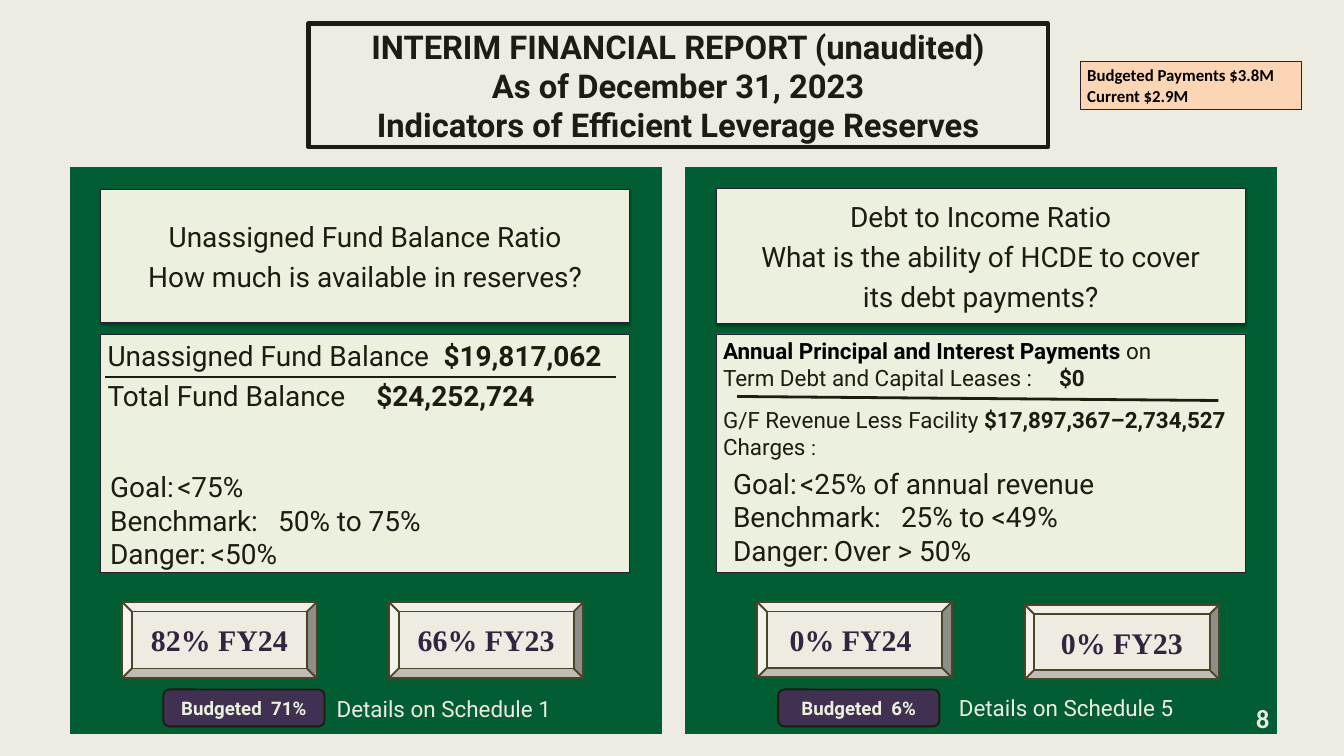
from lxml.etree import SubElement
from pptx import Presentation
from pptx.dml.color import RGBColor
from pptx.enum.shapes import MSO_CONNECTOR, MSO_SHAPE
from pptx.enum.text import MSO_ANCHOR, MSO_AUTO_SIZE, PP_ALIGN
from pptx.oxml.ns import qn
from pptx.util import Inches, Pt

CREAM, GREEN, PALE, INK = "EEECE1", "025E32", "EBF1DE", "1E1C11"
EDGE, BRONZE, PLUM, BLACK = "291F35", "4A452A", "403152", "000000"
BOLD = {"bold": True}


def rgb(color):
    """Turn a hex string into a colour."""
    return RGBColor.from_string(color)


def place(sp, x, y, w, h):
    """Set the position and size of a shape in inches."""
    sp.left, sp.top, sp.width, sp.height = (Inches(v) for v in (x, y, w, h))


def style(sp, fill=None, line=None, width=0.75):
    """Set the fill and outline of a shape."""
    if fill:
        sp.fill.solid()
        sp.fill.fore_color.rgb = rgb(fill)
    else:
        sp.fill.background()
    if line:
        sp.line.color.rgb = rgb(line)
        sp.line.width = Pt(width)
    else:
        sp.line.fill.background()


def add_run(p, text, size, font, color, bold=False):
    """Add one formatted run to a paragraph."""
    r = p.add_run()
    r.text = text
    r.font.size = Pt(size)
    r.font.name = font
    r.font.bold = bold
    r.font.color.rgb = rgb(color)


def set_tab(p, pos, align):
    """Give a paragraph one tab stop."""
    tabs = SubElement(p._p.get_or_add_pPr(), qn("a:tabLst"))
    SubElement(tabs, qn("a:tab"), pos=str(Inches(pos)), algn=align)


def write(sp, paras, size=30, font="Roboto", color=INK, bold=False,
          align=PP_ALIGN.LEFT, anchor=MSO_ANCHOR.TOP, before=0, tab=None,
          tab_align="l", inset=None, grow=False):
    """Fill a shape with paragraphs, each a string or a list of (text, format) runs."""
    tf = sp.text_frame
    tf.word_wrap = True
    tf.auto_size = MSO_AUTO_SIZE.SHAPE_TO_FIT_TEXT if grow else MSO_AUTO_SIZE.NONE
    tf.vertical_anchor = anchor
    if inset is not None:
        tf.margin_left = tf.margin_right = tf.margin_top = tf.margin_bottom = Inches(inset)
    befores = before if isinstance(before, list) else [before] * len(paras)
    stops = tab if isinstance(tab, list) else [tab] * len(paras)
    for i, (runs, gap, stop) in enumerate(zip(paras, befores, stops)):
        p = tf.add_paragraph() if i else tf.paragraphs[0]
        p.alignment = align
        p.space_before = Pt(gap)
        pPr = p._p.get_or_add_pPr()
        pPr.set("marL", "0")
        pPr.set("indent", "0")
        SubElement(pPr, qn("a:buNone"))
        if stop:
            set_tab(p, stop, tab_align)
        for text, fmt in [(runs, {})] if isinstance(runs, str) else runs:
            base = {"size": size, "font": font, "color": color, "bold": bold}
            for j, part in enumerate(text.split("\n")):
                if j:
                    p.add_line_break()
                add_run(p, part, **{**base, **fmt})


def add_panel(s, x):
    """Add a green panel behind the placeholders."""
    fb = s.shapes.build_freeform(Inches(x), Inches(2.48))
    fb.add_line_segments([(Inches(a), Inches(b)) for a, b in
                          ((x + 8.81, 2.48), (x + 8.81, 10.93), (x, 10.93))])
    sp = fb.convert_to_shape()
    sp.shadow.inherit = False
    style(sp, GREEN)
    sp.element.getparent().insert(2, sp.element)


def add_shadow(sp):
    """Add a soft shadow below a shape."""
    effects = SubElement(sp.element.spPr, qn("a:effectLst"))
    shadow = SubElement(effects, qn("a:outerShdw"), blurRad=str(Pt(3.1)),
                        dist=str(Pt(1.8)), dir="5400000", rotWithShape="0")
    color = SubElement(shadow, qn("a:srgbClr"), val=BLACK)
    SubElement(color, qn("a:alpha"), val="35000")


def add_header(s, idx, box, paras):
    """Fill a heading placeholder with the name and question of a ratio."""
    sp = s.placeholders[idx]
    place(sp, *box)
    style(sp, PALE, EDGE)
    add_shadow(sp)
    write(sp, paras, align=PP_ALIGN.CENTER, anchor=MSO_ANCHOR.MIDDLE, before=7)


def add_body(s, idx, box, paras, **fmt):
    """Fill a content placeholder with the terms of a ratio."""
    sp = s.placeholders[idx]
    place(sp, *box)
    style(sp, PALE, EDGE)
    write(sp, paras, **fmt)


def add_box(s, kind, box, paras, fill, line, width, **fmt):
    """Add a preset shape with text."""
    sp = s.shapes.add_shape(kind, *(Inches(v) for v in box))
    sp.shadow.inherit = False
    style(sp, fill, line, width)
    write(sp, paras, **fmt)


def add_label(s, box, paras, **fmt):
    """Add a text box."""
    sp = s.shapes.add_textbox(*(Inches(v) for v in box))
    write(sp, paras, grow=True, **fmt)


def add_rule(s, x1, y1, x2, y2):
    """Add a fraction line."""
    cn = s.shapes.add_connector(MSO_CONNECTOR.STRAIGHT, *(Inches(v) for v in (x1, y1, x2, y2)))
    cn.line.color.rgb = rgb(INK)
    cn.line.width = Pt(3)
    SubElement(cn.element.spPr, qn("a:effectLst"))


def main():
    """Build the slide."""
    prs = Presentation()
    prs.slide_width, prs.slide_height = Inches(20), Inches(11.25)
    s = prs.slides.add_slide(prs.slide_layouts[4])
    s.background.fill.solid()
    s.background.fill.fore_color.rgb = rgb(CREAM)
    centred = {"align": PP_ALIGN.CENTER, "anchor": MSO_ANCHOR.MIDDLE, "bold": True}

    for x in (1.04, 10.19):
        add_panel(s, x)

    title = s.shapes.title
    place(title, 4.59, 0.35, 11, 1.84)
    style(title, line=INK, width=4.5)
    write(title, ["INTERIM FINANCIAL REPORT (unaudited)\nAs of December 31, 2023\n"
                  "Indicators of Efficient Leverage Reserves"], size=35.1, inset=0, **centred)

    add_header(s, 1, (1.5, 2.82, 7.87, 1.98),
               ["Unassigned Fund Balance Ratio", "How much is available in reserves?"])
    add_header(s, 3, (10.66, 2.81, 7.87, 2),
               ["Debt to Income Ratio", "What is the ability of HCDE to cover",
                "its debt payments?"])

    add_body(s, 2, (1.5, 4.98, 7.87, 3.54),
             [[("Unassigned Fund Balance\t", {}), ("$19,817,062", BOLD)],
              [("Total Fund Balance\t", {}), ("$24,252,724", BOLD)]],
             before=7, tab=7.55, tab_align="r")
    add_body(s, 4, (10.66, 4.97, 7.87, 3.54),
             [[("Annual Principal and Interest Payments ", {"bold": True, "color": BLACK}),
               ("on", {})],
              [("Term Debt and Capital Leases :\t", {}), ("$0", BOLD)],
              [("G/F Revenue Less Facility ", {}), ("$17,897,367–2,734,527", BOLD)],
              [("Charges ", {}), (":", {"size": 22})]],
             size=24, before=[0, 0, 16.4, 0], tab=5)

    for x, y, h, text in ((1.82, 8.96, 1.13, "82% FY24"), (5.79, 8.96, 1.13, "66% FY23"),
                          (11.27, 8.96, 1.12, "0% FY24 "), (15.25, 9, 1.11, "0% FY23")):
        add_box(s, MSO_SHAPE.BEVEL, (x, y, 2.89, h), [text], CREAM, BRONZE, 2,
                size=32, font="Times New Roman", color="332440", **centred)
    for x, text in ((2.43, "Budgeted  71%"), (11.58, "Budgeted  6%")):
        add_box(s, MSO_SHAPE.ROUNDED_RECTANGLE, (x, 10.26, 2.4, 0.55), [text],
                PLUM, INK, 2, size=20, color=PALE, **centred)
    for box, number in (((4.91, 10.3, 3.48, 0.5), 1), ((14.17, 10.28, 3.83, 0.5), 5)):
        add_label(s, box, [f"Details on Schedule {number}"], size=24, color=CREAM)

    add_rule(s, 1.57, 5.61, 9.16, 5.61)
    add_rule(s, 10.97, 5.9, 18.13, 5.96)
    add_label(s, (1.54, 6.94, 7.87, 1.62),
              ["Goal:\t<75%", "Benchmark:\t50% to 75%", "Danger:\t<50%"], tab=3.2)
    add_label(s, (10.81, 6.89, 7.5, 1.62),
              ["Goal:\t<25% of annual revenue", "Benchmark:\t25% to <49%",
               "Danger:\tOver > 50%"], tab=[2.5, 2.7, 2.7])

    add_label(s, (18.47, 10.45, 0.42, 0.47), ["8"], size=28, font="Calibri", color=CREAM,
              bold=True, align=PP_ALIGN.RIGHT, inset=0)
    add_box(s, MSO_SHAPE.RECTANGLE, (16.08, 0.92, 3.29, 0.71),
            ["Budgeted Payments $3.8M", "Current $2.9M"], "FCD5B5", EDGE, 0.75,
            size=18, font="Calibri", color=BLACK, bold=True, grow=True)
    prs.save("out.pptx")


if __name__ == "__main__":
    main()
